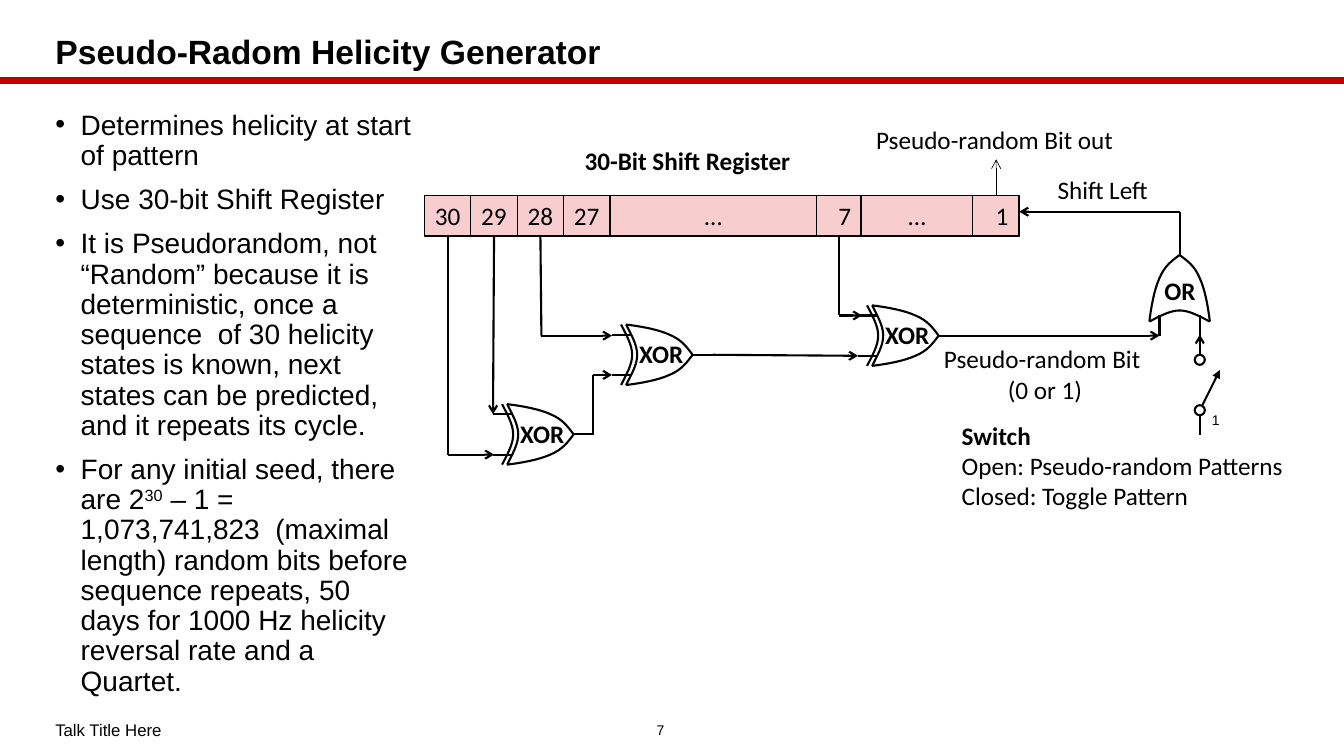
"""Build the slide on the pseudo-random helicity generator."""
from itertools import pairwise

from lxml import etree
from pptx import Presentation
from pptx import util as u
from pptx.dml.color import RGBColor
from pptx.enum import shapes, text
from pptx.oxml.ns import qn

BLACK, RED, PINK, WHITE = "000000", "C00000", "F7CDCD", "FFFFFF"
LEFT, CENTER, RIGHT = text.PP_ALIGN.LEFT, text.PP_ALIGN.CENTER, text.PP_ALIGN.RIGHT
TOP, MIDDLE = text.MSO_ANCHOR.TOP, text.MSO_ANCHOR.MIDDLE

POINTS = [
    "Determines helicity at start of pattern",
    "Use 30-bit Shift Register",
    "It is Pseudorandom, not “Random” because it is deterministic, once a sequence  "
    "of 30 helicity states is known, next states can be predicted, and it repeats its cycle.",
    "For any initial seed, there are 2^30^ – 1 = 1,073,741,823  (maximal length) random bits "
    "before sequence repeats, 50 days for 1000 Hz helicity reversal rate and a Quartet.",
]

REGISTER_LEFT, REGISTER_TOP, REGISTER_HEIGHT = 4.21, 1.94, 0.4
REGISTER_CELLS = [
    ("30", 0.46, CENTER), ("29", 0.46, CENTER), ("28", 0.46, CENTER), ("27", 0.46, CENTER),
    ("…", 2.05, CENTER), ("7", 0.44, RIGHT), ("…", 1.11, CENTER), ("1", 0.45, RIGHT),
]

GATE_SIDE = [(0, 0.3), (0.16, 0.28), (0.32, 0.25), (0.43, 0.2), (0.55, 0.15), (0.6, 0.08), (0.66, 0)]
GATE_BACK = [(0, -0.3), (0.05, -0.2), (0.11, -0.1), (0.11, 0), (0.11, 0.1), (0.05, 0.2), (0, 0.3)]
XOR_GATES = [(5.03, 4.31), (6.21, 3.52), (8.65, 3.33)]
OR_GATE = (11.7, 3.19)

ARROW_WIRES = [
    [(4.44, 2.34), (4.44, 4.51), (4.9, 4.51)],
    [(4.9, 2.34), (4.89, 4.11)],
    [(5.36, 2.34), (5.37, 3.33), (6.07, 3.33)],
    [(5.88, 4.31), (5.88, 3.72), (6.07, 3.72)],
    [(7.07, 3.52), (8.51, 3.53)],
    [(8.32, 2.34), (8.32, 3.13), (8.55, 3.13)],
    [(9.51, 3.33), (11.5, 3.33)],
    [(11.7, 2.33), (11.7, 2.1), (10.11, 2.1)],
]

LABELS = [
    (["30-Bit Shift Register"], (5.7, 1.39, 2.27, 0.4), {"bold": True}),
    (["Pseudo-random Bit out"], (8.59, 1.18, 2.58, 0.4), {}),
    (["Pseudo-random Bit ", "(0 or 1)"], (9.25, 3.36, 2.23, 0.71), {"align": CENTER}),
    (["Shift Left"], (10.39, 1.68, 1.12, 0.4), {}),
    (["OR"], (11.45, 2.68, 0.51, 0.4), {"bold": True}),
    (["1"], (11.92, 4.03, 0.28, 0.27), {"size": 10, "font": "Arial"}),
]


def color(value):
    """Return the colour for a hex string."""
    return RGBColor.from_string(value)


def inches(*lengths):
    """Return the lengths in slide units."""
    return [u.Inches(length) for length in lengths]


def write(frame, lines, size=18, font="Calibri", bold=False, align=LEFT, anchor=TOP,
          wrap=False, bullet=False, spacing=None, before=0):
    """Fill a text frame; carets enclose superscripts."""
    frame.auto_size = text.MSO_AUTO_SIZE.NONE
    frame.word_wrap = wrap
    frame.vertical_anchor = anchor
    for index, line in enumerate(lines):
        paragraph = frame.add_paragraph() if index else frame.paragraphs[0]
        paragraph.alignment = align
        if spacing:
            paragraph.line_spacing = spacing
        paragraph.space_before = u.Pt(before if index else 0)
        if bullet:
            properties = paragraph._p.get_or_add_pPr()
            properties.set("marL", str(u.Inches(0.25)))
            properties.set("indent", str(u.Inches(-0.25)))
            etree.SubElement(properties, qn("a:buFont"), typeface="Arial")
            etree.SubElement(properties, qn("a:buChar"), char="•")
        for part, words in enumerate(line.split("^")):
            run = paragraph.add_run()
            run.text = words
            run.font.size, run.font.name, run.font.bold = u.Pt(size), font, bold
            run.font.color.rgb = color(BLACK)
            if part % 2:
                run._r.get_or_add_rPr().set("baseline", "30000")


def label(slide, lines, place, **style):
    """Add a text box and return its frame."""
    frame = slide.shapes.add_textbox(*inches(*place)).text_frame
    write(frame, lines, **style)
    return frame


def fill_placeholder(placeholder, lines, place, **style):
    """Move a placeholder and fill it."""
    placeholder.left, placeholder.top, placeholder.width, placeholder.height = inches(*place)
    write(placeholder.text_frame, lines, wrap=True, font="Arial", spacing=0.9, **style)


def segment(slide, start, end, head=None, width=1.5, stroke=BLACK):
    """Add a straight line, with an arrowhead at its end if one is named."""
    line = slide.shapes.add_connector(shapes.MSO_CONNECTOR.STRAIGHT, *inches(*start, *end))
    line.line.color.rgb = color(stroke)
    line.line.width = u.Pt(width)
    if head:
        etree.SubElement(line.line._get_or_add_ln(), qn("a:tailEnd"), type=head)
    etree.SubElement(line._element.spPr, qn("a:effectLst"))


def wire(slide, corners):
    """Add a wire through its corners that ends in an arrow."""
    legs = list(pairwise(corners))
    for leg in legs:
        segment(slide, *leg, head="arrow" if leg == legs[-1] else None)


def style_outline(shape, fill=None, width=1.5):
    """Give a shape a black outline and a plain fill or none."""
    shape.shadow.inherit = False
    shape.line.color.rgb = color(BLACK)
    shape.line.width = u.Pt(width)
    if fill:
        shape.fill.solid()
        shape.fill.fore_color.rgb = color(fill)
    else:
        shape.fill.background()


def box(slide, kind, place, **style):
    """Add an outlined preset shape."""
    shape = slide.shapes.add_shape(kind, *inches(*place))
    style_outline(shape, **style)
    return shape


def curve(slide, points):
    """Add an open outline of cubic curves, three points to each after the start."""
    start, *controls = [inches(*point) for point in points]
    builder = slide.shapes.build_freeform(*start)
    builder.add_line_segments(controls, close=False)
    shape = builder.convert_to_shape()
    style_outline(shape)
    steps = list(shape._element.iter(qn("a:lnTo")))
    for first in range(0, len(steps), 3):
        cubic = etree.Element(qn("a:cubicBezTo"))
        steps[first].addprevious(cubic)
        for step in steps[first:first + 3]:
            cubic.append(step[0])
            step.getparent().remove(step)


def gate(slide, x, y, upright=False, exclusive=True):
    """Add a logic gate with its leads, from the middle of its back."""
    def locate(along, across):
        return (x + across, y - along) if upright else (x + along, y + across)

    for start, end, across in ((0.66, 0.86, 0), (-0.14, 0.06, -0.2), (-0.14, 0.06, 0.2)):
        segment(slide, locate(start, across), locate(end, across))
    mirrored = [(along, -across) for along, across in GATE_SIDE]
    outlines = [mirrored, GATE_SIDE, GATE_BACK]
    if exclusive:
        outlines.append([(along - 0.05, across) for along, across in GATE_BACK])
    for outline in outlines:
        curve(slide, [locate(*point) for point in outline])


def shift_register(slide):
    """Add the row of register cells."""
    rectangle = shapes.MSO_SHAPE.RECTANGLE
    box(slide, rectangle, (REGISTER_LEFT, REGISTER_TOP, 5.9, REGISTER_HEIGHT), fill=PINK, width=1)
    left = REGISTER_LEFT
    for bit, width, align in REGISTER_CELLS:
        cell = box(slide, rectangle, (left, REGISTER_TOP, width, REGISTER_HEIGHT), width=0.75)
        write(cell.text_frame, [bit], align=align, wrap=len(bit) == 1)
        left += width


def switch(slide):
    """Add the toggle switch below the OR gate."""
    circle = shapes.MSO_SHAPE.OVAL
    box(slide, circle, (11.85, 3.52, 0.1, 0.1))
    segment(slide, (11.9, 4.12), (11.9, 4.32))
    segment(slide, (11.9, 3.52), (11.9, 3.32), head="arrow")
    segment(slide, (11.9, 4.07), (12.1, 3.67), head="triangle")
    box(slide, circle, (11.85, 4.02, 0.1, 0.1), fill=WHITE)
    modes = ["Switch", "Open: Pseudo-random Patterns", "Closed: Toggle Pattern"]
    legend = label(slide, modes, (9.44, 4.12, 3.43, 1.01))
    legend.paragraphs[0].runs[0].font.bold = True


def main():
    """Build and save the slide."""
    deck = Presentation()
    deck.slide_width, deck.slide_height = inches(13.33, 7.5)
    slide = deck.slides.add_slide(deck.slide_layouts[1])
    title, body = slide.placeholders
    segment(slide, (-0.02, 0.8), (13.33, 0.8), width=4.5, stroke=RED)
    fill_placeholder(title, ["Pseudo-Radom Helicity Generator"], (0.45, 0.27, 12.34, 0.53),
                     size=24, bold=True, anchor=MIDDLE)
    fill_placeholder(body, POINTS, (0.45, 1.05, 3.74, 5.89), size=20, bullet=True, before=10)
    label(slide, ["Talk Title Here"], (0.45, 7.07, 5.71, 0.34),
          size=12, font="Arial", anchor=MIDDLE, wrap=True)
    label(slide, ["7"], (6.16, 7.07, 0.78, 0.34),
          size=10, font="Arial", align=CENTER, anchor=MIDDLE, wrap=True)
    gate(slide, *OR_GATE, upright=True, exclusive=False)
    switch(slide)
    for x, y in XOR_GATES:
        gate(slide, x, y)
        label(slide, ["XOR"], (x + 0.03, y - 0.21, 0.64, 0.4), bold=True)
    shift_register(slide)
    for corners in ARROW_WIRES:
        wire(slide, corners)
    segment(slide, (9.88, 1.94), (9.88, 1.58), head="arrow", width=0.5)
    for lines, place, style in LABELS:
        label(slide, lines, place, **style)
    deck.save("out.pptx")


if __name__ == "__main__":
    main()
